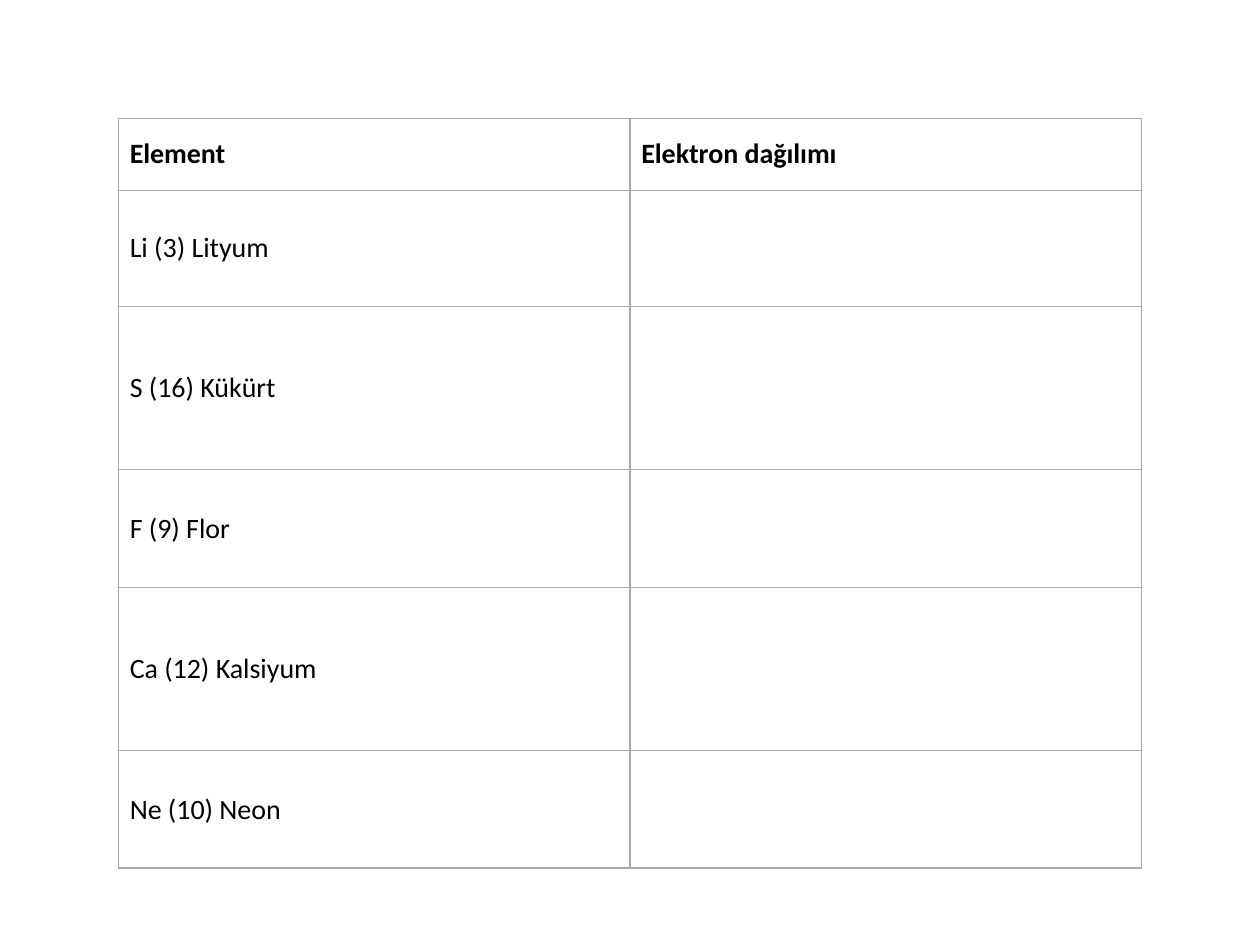
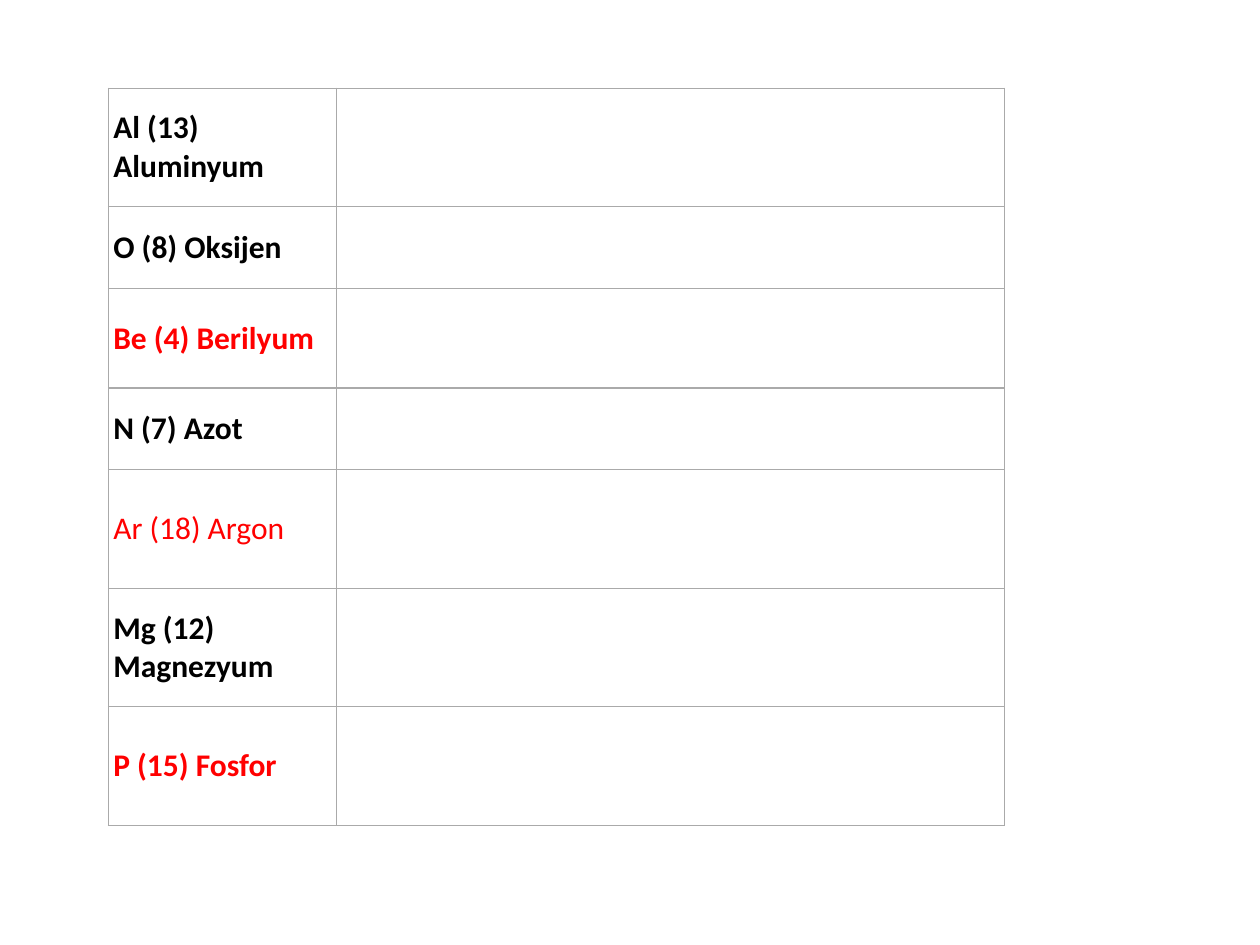
"""Builds two slides with tables of elements and their electron layouts."""
from dataclasses import dataclass

from lxml.etree import SubElement
from pptx import Presentation
from pptx.dml.color import RGBColor
from pptx.enum.text import MSO_ANCHOR
from pptx.oxml.ns import qn
from pptx.util import Inches, Pt

FONT = "Calibri"
BLACK, RED, WHITE, GRAY = "000000", "FF0000", "FFFFFF", "AAAAAA"


@dataclass
class Row:
    height: float
    texts: tuple[str, ...]
    bold: bool = False
    color: str = BLACK


@dataclass
class Grid:
    left: float
    top: float
    widths: tuple[float, ...]
    size: int
    pad_x: float
    pad_y: float
    rows: list[Row]


GRIDS = [
    Grid(0.94, 0.94, (4.06, 4.06), 16, 0.09, 0.08, [
        Row(0.57, ("Element", "Elektron dağılımı"), True),
        Row(0.92, ("Li (3) Lityum",)),
        Row(1.3, ("S (16) Kükürt",)),
        Row(0.93, ("F (9) Flor",)),
        Row(1.3, ("Ca (12) Kalsiyum",)),
        Row(0.93, ("Ne (10) Neon",)),
    ]),
    Grid(0.86, 0.7, (1.81, 5.3), 18, 0.04, 0.03, [
        Row(0.94, ("Al (13) Aluminyum",), True),
        Row(0.65, ("O (8) Oksijen",), True),
        Row(0.79, ("Be (4) Berilyum",), True, RED),
        Row(0.65, ("N (7) Azot",), True),
        Row(0.94, ("Ar (18) Argon",), False, RED),
        Row(0.94, ("Mg (12) Magnezyum",), True),
        Row(0.94, ("P (15) Fosfor",), True, RED),
    ]),
]


def paint(fill, color: str) -> None:
    fill.solid()
    fill.fore_color.rgb = RGBColor.from_string(color)


def frame(cell) -> None:
    props = cell._tc.get_or_add_tcPr()
    for side in ("a:lnL", "a:lnR", "a:lnT", "a:lnB"):
        line = SubElement(props, qn(side), w=str(Pt(0.75)))
        fill = SubElement(line, qn("a:solidFill"))
        SubElement(fill, qn("a:srgbClr"), val=GRAY)


def style(cell, grid: Grid) -> None:
    frame(cell)
    paint(cell.fill, WHITE)
    cell.vertical_anchor = MSO_ANCHOR.MIDDLE
    cell.margin_left = cell.margin_right = Inches(grid.pad_x)
    cell.margin_top = cell.margin_bottom = Inches(grid.pad_y)


def write(cell, text: str, row: Row, size: int) -> None:
    cell.text_frame.text = text
    font = cell.text_frame.paragraphs[0].runs[0].font
    font.name, font.size, font.bold = FONT, Pt(size), row.bold
    font.color.rgb = RGBColor.from_string(row.color)


def draw(slide, grid: Grid) -> None:
    width = sum(grid.widths)
    height = sum(row.height for row in grid.rows)
    table = slide.shapes.add_table(
        len(grid.rows), len(grid.widths), Inches(grid.left),
        Inches(grid.top), Inches(width), Inches(height)).table
    table.first_row = table.horz_banding = False
    for column, span in zip(table.columns, grid.widths):
        column.width = Inches(span)
    for line, row in zip(table.rows, grid.rows):
        line.height = Inches(row.height)
        for cell in line.cells:
            style(cell, grid)
        for cell, text in zip(line.cells, row.texts):
            write(cell, text, row, grid.size)


def main() -> None:
    deck = Presentation()
    deck.slide_width, deck.slide_height = Inches(10), Inches(7.5)
    paint(deck.slide_master.background.fill, WHITE)
    blank = deck.slide_layouts[6]
    for grid in GRIDS:
        draw(deck.slides.add_slide(blank), grid)
    deck.save("out.pptx")


if __name__ == "__main__":
    main()
